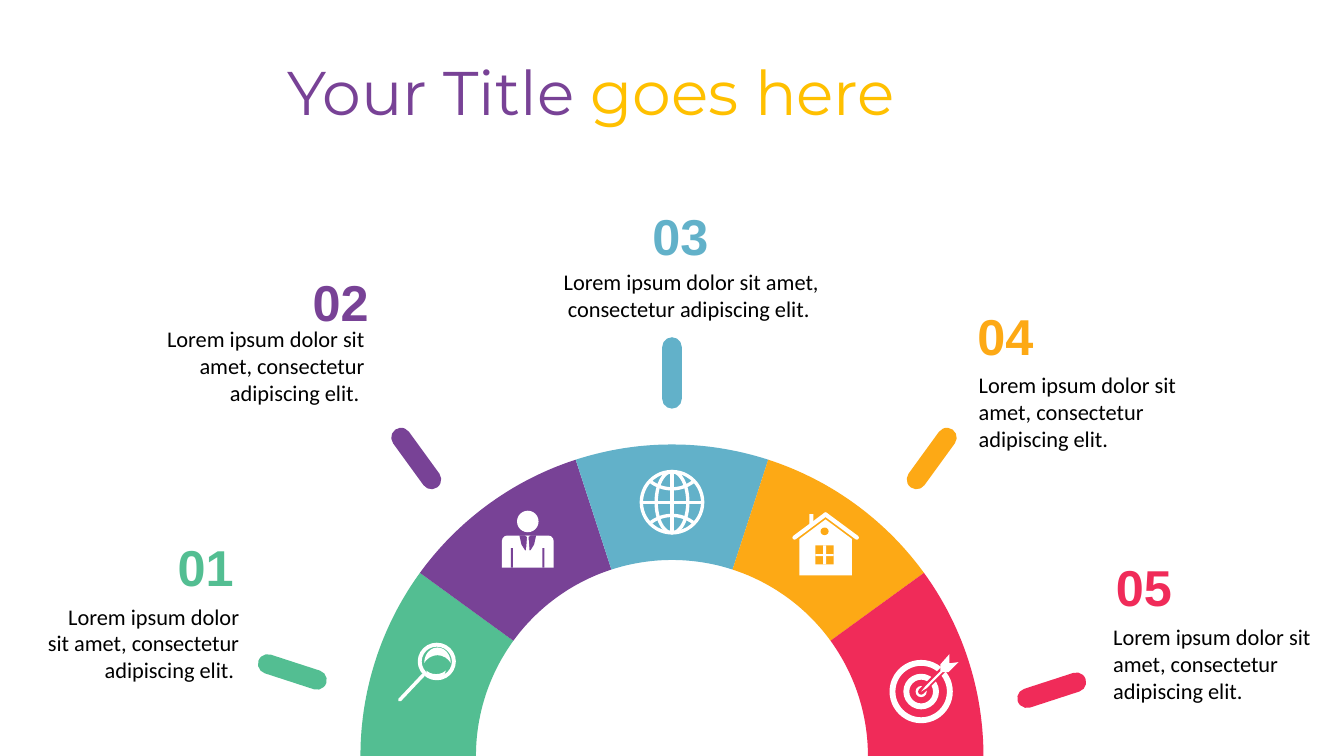
from math import cos, radians, sin

from pptx import Presentation
from pptx.dml.color import RGBColor
from pptx.enum.shapes import MSO_CONNECTOR, MSO_SHAPE
from pptx.enum.text import MSO_ANCHOR, PP_ALIGN
from pptx.oxml.ns import qn
from pptx.oxml.xmlchemy import OxmlElement
from pptx.util import Pt

GREEN = RGBColor(0x53, 0xBE, 0x92)
PURPLE = RGBColor(0x78, 0x42, 0x96)
BLUE = RGBColor(0x62, 0xB1, 0xC9)
ORANGE = RGBColor(0xFD, 0xA9, 0x15)
PINK = RGBColor(0xF0, 0x2B, 0x59)
GOLD = RGBColor(0xFF, 0xC0, 0x00)
WHITE = RGBColor(0xFF, 0xFF, 0xFF)
BLACK = RGBColor(0, 0, 0)

LEFT, CENTER, RIGHT = PP_ALIGN.LEFT, PP_ALIGN.CENTER, PP_ALIGN.RIGHT
TOP, MIDDLE = MSO_ANCHOR.TOP, MSO_ANCHOR.MIDDLE
OVAL, RECT, MOON = MSO_SHAPE.OVAL, MSO_SHAPE.RECTANGLE, MSO_SHAPE.MOON
PILL, SHOULDERS = MSO_SHAPE.ROUNDED_RECTANGLE, MSO_SHAPE.ROUND_2_SAME_RECTANGLE
STRAIGHT = MSO_CONNECTOR.STRAIGHT

HUB_X, HUB_Y, OUTER_R, INNER_R, SWEEP = 480, 540, 222.5, 140, 36
LOREM = "Lorem ipsum dolor sit amet, consectetur adipiscing elit."
STEPS = [
    (GREEN, RIGHT, (102, 379.5), (23, 425.5, 157.5), (208.8, 480)),
    (PURPLE, RIGHT, (198.5, 190), (82, 227.5, 188), (297.3, 327.5)),
    (BLUE, CENTER, (450, 143.3), (385, 186.5, 217.5), (480, 266.4)),
    (ORANGE, LEFT, (691, 214.5), (689.5, 260, 188), (665.5, 327.5)),
    (PINK, LEFT, (790, 394), (785.5, 440, 170.5), (751.2, 493)),
]


def paint(s, fill=None, line=None, width=1):
    """Give a shape its fill and outline, without shadow."""
    s.shadow.inherit = False
    if fill is None:
        s.fill.background()
    else:
        s.fill.solid()
        s.fill.fore_color.rgb = fill
    if line is None:
        s.line.fill.background()
    else:
        s.line.color.rgb = line
        s.line.width = Pt(width)
    return s


def preset(slide, kind, x, y, w, h, rotation=0, **look):
    """Add a preset shape."""
    s = slide.shapes.add_shape(kind, Pt(x), Pt(y), Pt(w), Pt(h))
    s.rotation = rotation
    return paint(s, **look)


def disc(slide, cx, cy, rx, ry, **look):
    """Add an ellipse around a centre."""
    return preset(slide, OVAL, cx - rx, cy - ry, 2 * rx, 2 * ry, **look)


def outline(slide, points, close=True, **look):
    """Add a freeform through the points."""
    points = [(Pt(x), Pt(y)) for x, y in points]
    builder = slide.shapes.build_freeform(*points[0])
    builder.add_line_segments(points[1:], close=close)
    return paint(builder.convert_to_shape(), **look)


def stroke(slide, x1, y1, x2, y2, color, width):
    """Add a straight line with round ends."""
    s = slide.shapes.add_connector(STRAIGHT, Pt(x1), Pt(y1), Pt(x2), Pt(y2))
    s.line.color.rgb = color
    s.line.width = Pt(width)
    spPr = s._element.spPr
    spPr.find(qn("a:ln")).set("cap", "rnd")
    spPr.append(OxmlElement("a:effectLst"))


def arc(cx, cy, r, start, end):
    """Return points on an arc, angles in degrees counterclockwise."""
    angles = [radians(start + (end - start) * i / 36) for i in range(37)]
    return [(cx + r * cos(a), cy - r * sin(a)) for a in angles]


def write(p, text, size=16, color=BLACK, font="Calibri", bold=False, align=LEFT):
    """Add a formatted run to a paragraph."""
    p.alignment = align
    r = p.add_run()
    r.text = text
    r.font.size, r.font.name, r.font.bold = Pt(size), font, bold
    r.font.color.rgb = color


def label(slide, x, y, w, h, text, anchor=TOP, inset=(7.2, 3.6), **style):
    """Add a wrapping text box."""
    tf = slide.shapes.add_textbox(Pt(x), Pt(y), Pt(w), Pt(h)).text_frame
    tf.word_wrap = True
    tf.vertical_anchor = anchor
    tf.margin_left = tf.margin_right = Pt(inset[0])
    tf.margin_top = tf.margin_bottom = Pt(inset[1])
    write(tf.paragraphs[0], text, **style)


def add_title(slide):
    """Fill the title placeholder."""
    s = slide.shapes.title
    s.left, s.top, s.width, s.height = Pt(198), Pt(38), Pt(526), Pt(60.5)
    s.text_frame.vertical_anchor = MIDDLE
    p = s.text_frame.paragraphs[0]
    p.line_spacing = 0.9
    write(p, "Your Title ", size=44, color=PURPLE, font="Montserrat")
    write(p, "goes here", size=44, color=GOLD, font="Montserrat")


def add_step(slide, i, color, align, number_at, text_at, tick_at):
    """Add one arch segment with its tick, number and text."""
    start = 180 - i * SWEEP
    rim = arc(HUB_X, HUB_Y, OUTER_R, start, start - SWEEP)
    hollow = arc(HUB_X, HUB_Y, INNER_R, start - SWEEP, start)
    outline(slide, rim + hollow, fill=color)
    x, y = tick_at
    tick = preset(slide, PILL, x - 25.5, y - 7, 51, 14,
                  rotation=SWEEP * (i + 0.5), fill=color)
    tick.adjustments[0] = 0.5
    label(slide, *number_at, 72, 51, f"{i + 1:02}", size=36, color=color,
          font="Arial", bold=True, align=align)
    x, y, w = text_at
    text = LOREM if align == LEFT else LOREM + " "
    label(slide, x, y, w, 48 if align == CENTER else 67.5, text,
          anchor=MIDDLE, inset=(9.6, 4.8), align=align)


def add_magnifier(slide):
    """Draw the magnifying glass."""
    disc(slide, 312, 472.5, 12.2, 12, line=WHITE, width=2.8)
    preset(slide, MOON, 307, 458.5, 11, 19, rotation=90, fill=WHITE)
    preset(slide, MOON, 309, 474.5, 5, 14, rotation=270, fill=WHITE)
    stroke(slide, 302.5, 482, 285.5, 500, WHITE, 2.5)


def add_person(slide):
    """Draw the person in a suit."""
    disc(slide, 377, 372.5, 7.7, 7.7, fill=WHITE)
    preset(slide, SHOULDERS, 358.5, 382.5, 37, 23, fill=WHITE)
    outline(slide, [(371, 382.5), (372.5, 389), (375, 393), (377, 393.5),
                    (379, 393), (381.5, 389), (383, 382.5)], fill=PURPLE)
    outline(slide, [(375, 382.5), (379, 382.5), (377.5, 383.5), (378.3, 393.8),
                    (375.7, 393.8), (376.5, 383.5)], fill=WHITE)
    for x in (365, 387.5):
        preset(slide, RECT, x, 391.5, 1.4, 14, fill=PURPLE)


def add_globe(slide):
    """Draw the globe."""
    x, y, r = 480, 358.7, 21.9
    for rx in (r, 11.3):
        disc(slide, x, y, rx, r, line=WHITE, width=2.4)
    stroke(slide, x, y - r, x, y + r, WHITE, 2.2)
    stroke(slide, x - r, y, x + r, y, WHITE, 2.2)
    for offset, start in ((-34.5, 233), (34.5, 53)):
        outline(slide, arc(x, y + offset, 25, start, start + 74),
                close=False, line=WHITE, width=2.4)


def add_house(slide):
    """Draw the house."""
    outline(slide, [(589.7, 371), (608.5, 385), (608.5, 411),
                    (571, 411), (571, 385)], fill=WHITE)
    disc(slide, 589, 379.5, 2.9, 2.7, fill=ORANGE)
    preset(slide, RECT, 582.5, 389.5, 13, 13.7, fill=ORANGE)
    preset(slide, RECT, 588, 389.5, 2.2, 13.7, fill=WHITE)
    preset(slide, RECT, 582.5, 395.8, 13, 1.5, fill=WHITE)
    preset(slide, RECT, 578.2, 367.2, 2.9, 8, fill=WHITE)
    for x in (567.5, 612):
        stroke(slide, 589.7, 367.5, x, 384, WHITE, 3)


def add_target(slide):
    """Draw the target with its arrow."""
    x, y = 658, 494
    for r in (20.5, 10.6):
        disc(slide, x, y, r, r, line=WHITE, width=4.2)
    disc(slide, x, y, 4, 4, fill=WHITE)
    stroke(slide, x, y, 679, 473, PINK, 4.5)
    outline(slide, [(x, y), (661, 490.3), (671.8, 479.5), (671.8, 474.5),
                    (678.2, 467.3), (678.2, 473.8), (684.7, 473),
                    (677.5, 480.2), (673.2, 480.2), (661.7, 491.8)], fill=WHITE)


def main():
    """Build and save the slide."""
    prs = Presentation()
    prs.slide_width, prs.slide_height = Pt(960), Pt(540)
    slide = prs.slides.add_slide(prs.slide_layouts[5])
    add_title(slide)
    for i, step in enumerate(STEPS):
        add_step(slide, i, *step)
    for add_icon in (add_magnifier, add_person, add_globe, add_house, add_target):
        add_icon(slide)
    prs.save("out.pptx")


if __name__ == "__main__":
    main()
